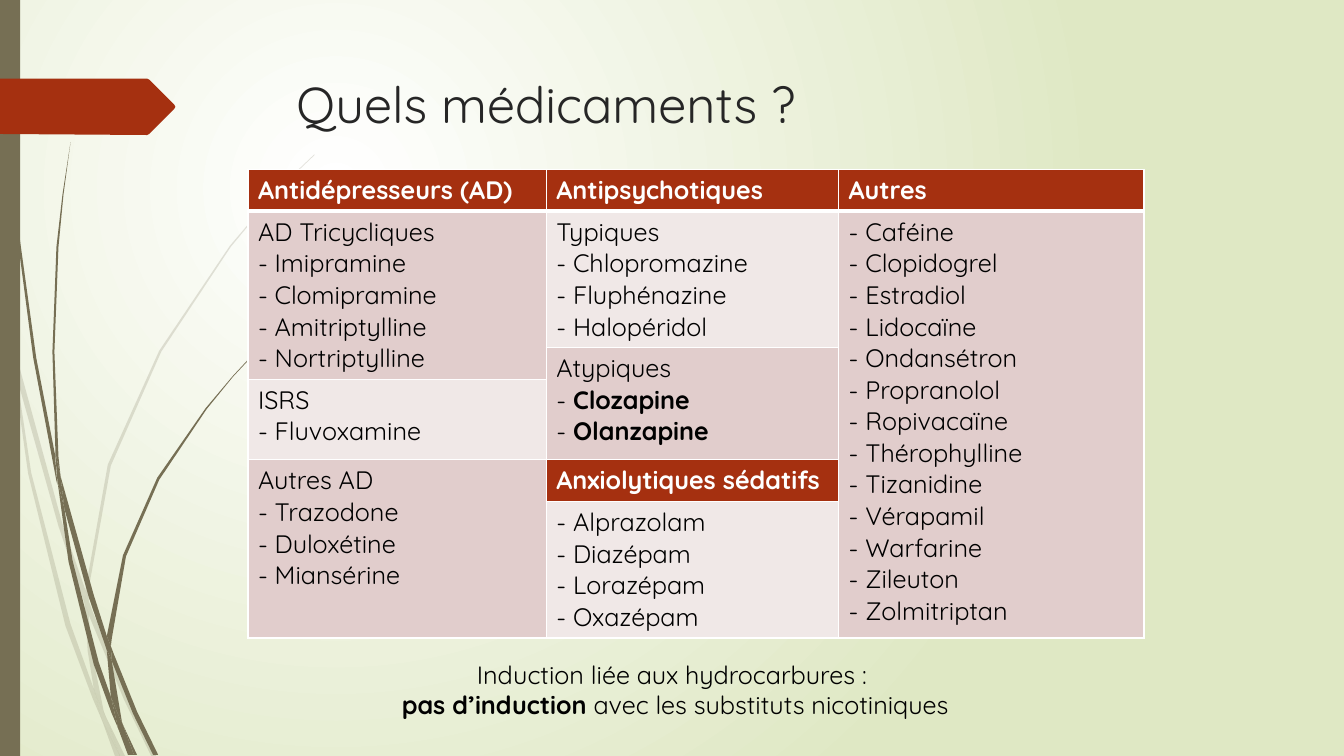
"""Build the slide on medicines affected by smoking, on a grid of 100 columns and rows to the inch."""
import dataclasses
import typing

import lxml.etree
import pptx
import pptx.dml.color
import pptx.enum.shapes
import pptx.enum.text
import pptx.oxml.ns
import pptx.util

COLUMNS, ROWS = 4000 / 3, 750
Points = list[tuple[int, int]]


@dataclasses.dataclass(frozen=True)
class Theme:
    font: str = "Quicksand"
    title_size: int = 36
    body_size: int = 18
    title: str = "262626"
    text: str = "000000"
    white: str = "FFFFFF"
    glow: str = "DFE8C4"
    stem: str = "766F54"
    accent: str = "A53010"
    rose: str = "E1CDCC"
    pale: str = "F0E8E7"
    thin: int = 1
    thick: int = 3


class Block(typing.NamedTuple):
    row: int
    column: int
    height: int
    fill: str
    lines: list[str]


THEME = Theme()

BACK_STEMS: list[Points] = [
    [(11, 350), (9, 322), (0, 282), (0, 299), (10, 344)],
    [(58, 522), (84, 599), (85, 586), (62, 520), (14, 345), (17, 376)],
    [(92, 607), (88, 596), (88, 610), (123, 694), (150, 750), (155, 750), (127, 692)],
    [(119, 750), (124, 750), (105, 711)],
    [(93, 683), (70, 619), (31, 469), (17, 376), (11, 350), (28, 470), (65, 621), (92, 693),
     (101, 714), (99, 707)],
    [(84, 599), (87, 646), (93, 683), (96, 692), (105, 711), (103, 706), (91, 646), (88, 610),
     (88, 608)],
    [(88, 584), (110, 462), (160, 349), (229, 245), (268, 198), (290, 175), (312, 154), (312, 153),
     (289, 175), (268, 197), (228, 244), (158, 348), (107, 461), (85, 584), (85, 586), (88, 596)],
    [(101, 714), (114, 750), (119, 750)],
    [(88, 608), (88, 610), (88, 596), (85, 586), (84, 599)],
    [(96, 692), (93, 683), (99, 707), (101, 714), (119, 750), (105, 711)],
]
FRONT_STEMS: list[Points] = [
    [(7, 110), (17, 233), (33, 355), (56, 477), (57, 481), (55, 457), (55, 453), (36, 355),
     (19, 232), (8, 109), (5, 48), (4, 0), (3, 0), (4, 48)],
    [(88, 592), (106, 645), (106, 633), (106, 631), (93, 590), (60, 472), (64, 505)],
    [(113, 649), (110, 641), (111, 656), (132, 708), (152, 749), (157, 749), (136, 706)],
    [(110, 691), (98, 657), (72, 556), (64, 505), (57, 477), (68, 557), (93, 659), (111, 708),
     (117, 722), (116, 717)],
    [(60, 472), (58, 453), (54, 349), (58, 245), (63, 193), (70, 141), (62, 193), (56, 245),
     (52, 349), (55, 449)],
    [(133, 749), (136, 749), (122, 719)],
    [(57, 477), (64, 505), (60, 472), (55, 449), (55, 453)],
    [(111, 633), (125, 552), (158, 476), (205, 406), (231, 374), (245, 359), (261, 344), (260, 344),
     (245, 358), (231, 373), (204, 405), (156, 474), (122, 551), (106, 631), (110, 641)],
    [(117, 722), (127, 749), (131, 749)],
    [(106, 645), (110, 691), (116, 706), (122, 719), (121, 716), (111, 656), (109, 651)],
    [(106, 645), (109, 651), (111, 656), (110, 641), (106, 631), (106, 633)],
    [(116, 706), (110, 691), (116, 717), (117, 722), (130, 749), (133, 749), (122, 719)],
]
RIBBON: Points = [(0, 78), (146, 78), (148, 79), (173, 104), (174, 106), (173, 108), (148, 133),
                  (146, 134), (0, 133)]

COLUMN_WIDTHS = [296, 290, 303]
ROW_HEIGHTS = [41, 129, 31, 80, 33, 130]
MEDICINES = [
    Block(0, 0, 1, THEME.accent, ["*Antidépresseurs (AD)*"]),
    Block(0, 1, 1, THEME.accent, ["*Antipsychotiques*"]),
    Block(0, 2, 1, THEME.accent, ["*Autres*"]),
    Block(1, 0, 2, THEME.rose, ["AD Tricycliques", "- Imipramine", "- Clomipramine",
                                "- Amitriptylline", "- Nortriptylline"]),
    Block(3, 0, 1, THEME.pale, ["ISRS", "- Fluvoxamine"]),
    Block(4, 0, 2, THEME.rose, ["Autres AD", "- Trazodone", "- Duloxétine", "- Miansérine"]),
    Block(1, 1, 1, THEME.pale, ["Typiques", "- Chlopromazine", "- Fluphénazine", "- Halopéridol"]),
    Block(2, 1, 2, THEME.rose, ["Atypiques", "- *Clozapine*", "- *Olanzapine*"]),
    Block(4, 1, 1, THEME.accent, ["*Anxiolytiques sédatifs*"]),
    Block(5, 1, 1, THEME.pale, ["- Alprazolam", "- Diazépam", "- Lorazépam", "- Oxazépam"]),
    Block(1, 2, 5, THEME.rose, ["- Caféine", "- Clopidogrel", "- Estradiol", "- Lidocaïne",
                                "- Ondansétron", "- Propranolol", "- Ropivacaïne",
                                "- Thérophylline", "- Tizanidine", "- Vérapamil", "- Warfarine",
                                "- Zileuton", "- Zolmitriptan"]),
]

deck = pptx.Presentation()
deck.slide_width, deck.slide_height = pptx.util.Inches(40 / 3), pptx.util.Inches(7.5)


def across(columns: float) -> int:
    return round(deck.slide_width * columns / COLUMNS)


def down(rows: float) -> int:
    return round(deck.slide_height * rows / ROWS)


def rgb(value: str) -> pptx.dml.color.RGBColor:
    return pptx.dml.color.RGBColor.from_string(value)


def apply_format(target: typing.Any, values: dict[str, typing.Any]) -> None:
    for name, value in values.items():
        setattr(target, name, value)


def add_xml(parent: typing.Any, tag: str, **values: str) -> typing.Any:
    return lxml.etree.SubElement(parent, pptx.oxml.ns.qn(tag), values)


def write(frame: typing.Any, lines: list[str], size: int, color: str,
          align: pptx.enum.text.PP_ALIGN = pptx.enum.text.PP_ALIGN.LEFT) -> None:
    for number, line in enumerate(lines):
        paragraph = frame.add_paragraph() if number else frame.paragraphs[0]
        paragraph.alignment = align
        for part, words in enumerate(line.split("*")):
            if words:
                run = paragraph.add_run()
                run.text = words
                apply_format(run.font, {"name": THEME.font, "size": pptx.util.Pt(size),
                                        "bold": part % 2 == 1})
                run.font.color.rgb = rgb(color)


def paint(shape: typing.Any, color: str, opacity: int = 100) -> None:
    shape.shadow.inherit = False
    shape.fill.solid()
    shape.fill.fore_color.rgb = rgb(color)
    shape.line.fill.background()
    if opacity < 100:
        tint = next(shape.element.iter(pptx.oxml.ns.qn("a:srgbClr")))
        add_xml(tint, "a:alpha", val=str(opacity * 1000))


def draw_outline(slide: typing.Any, outline: Points, color: str, opacity: int = 100) -> typing.Any:
    corners = [(across(column), down(row)) for column, row in outline]
    builder = slide.shapes.build_freeform(*corners[0])
    builder.add_line_segments(corners[1:], close=True)
    shape = builder.convert_to_shape()
    paint(shape, color, opacity)
    return shape


def draw_background(slide: typing.Any) -> None:
    fill = slide.background.fill
    fill.gradient()
    for stop, color in zip(fill.gradient_stops, (THEME.white, THEME.glow)):
        stop.color.rgb = rgb(color)
    gradient = next(slide.element.iter(pptx.oxml.ns.qn("a:gradFill")))
    gradient.remove(gradient.find(pptx.oxml.ns.qn("a:lin")))
    circle = add_xml(gradient, "a:path", path="circle")
    add_xml(circle, "a:fillToRect", l="50000", t="50000", r="100000", b="100000")


def style_cell(cell: typing.Any, row: int, fill: str) -> None:
    properties = cell._tc.get_or_add_tcPr()
    for side in "LRTB":
        heavy = (row, side) in ((0, "B"), (1, "T"))
        points = THEME.thick if heavy else THEME.thin
        border = add_xml(properties, f"a:ln{side}", w=str(pptx.util.Pt(points)))
        add_xml(add_xml(border, "a:solidFill"), "a:srgbClr", val=THEME.white)
    cell.fill.solid()
    cell.fill.fore_color.rgb = rgb(fill)


def draw_medicines(slide: typing.Any) -> None:
    table = slide.shapes.add_table(len(ROW_HEIGHTS), len(COLUMN_WIDTHS), across(246), down(168),
                                   across(sum(COLUMN_WIDTHS)), down(sum(ROW_HEIGHTS))).table
    apply_format(table, {"first_row": False, "horz_banding": False})
    for column, width in zip(table.columns, COLUMN_WIDTHS):
        column.width = across(width)
    for row, height in zip(table.rows, ROW_HEIGHTS):
        row.height = down(height)
    for block in MEDICINES:
        for row in range(block.row, block.row + block.height):
            style_cell(table.cell(row, block.column), row, block.fill)
        cell = table.cell(block.row, block.column)
        if block.height > 1:
            cell.merge(table.cell(block.row + block.height - 1, block.column))
        color = THEME.white if block.fill == THEME.accent else THEME.text
        write(cell.text_frame, block.lines, THEME.body_size, color)


def main() -> None:
    slide = deck.slides.add_slide(deck.slide_layouts[5])
    draw_background(slide)
    for stems, opacity in ((BACK_STEMS, 20), (FRONT_STEMS, 100)):
        slide.shapes.add_group_shape(
            [draw_outline(slide, stem, THEME.stem, opacity) for stem in stems])
    edge = slide.shapes.add_shape(pptx.enum.shapes.MSO_SHAPE.RECTANGLE, 0, 0, across(20), down(ROWS))
    paint(edge, THEME.stem)
    draw_outline(slide, RIBBON, THEME.accent)

    heading = slide.shapes.title
    apply_format(heading, {"left": across(284), "top": down(68),
                           "width": across(975), "height": down(140)})
    apply_format(heading.text_frame, {"vertical_anchor": pptx.enum.text.MSO_ANCHOR.TOP,
                                      "auto_size": pptx.enum.text.MSO_AUTO_SIZE.NONE})
    write(heading.text_frame, ["Quels médicaments ?"], THEME.title_size, THEME.title)

    draw_medicines(slide)

    induction = slide.shapes.add_textbox(across(364), down(649), across(605), down(71)).text_frame
    apply_format(induction, {"word_wrap": False,
                             "auto_size": pptx.enum.text.MSO_AUTO_SIZE.SHAPE_TO_FIT_TEXT})
    write(induction, ["Induction liée aux hydrocarbures :",
                      " *pas d’induction *avec les substituts nicotiniques"],
          THEME.body_size, THEME.text, pptx.enum.text.PP_ALIGN.CENTER)
    deck.save("out.pptx")


if __name__ == "__main__":
    main()
